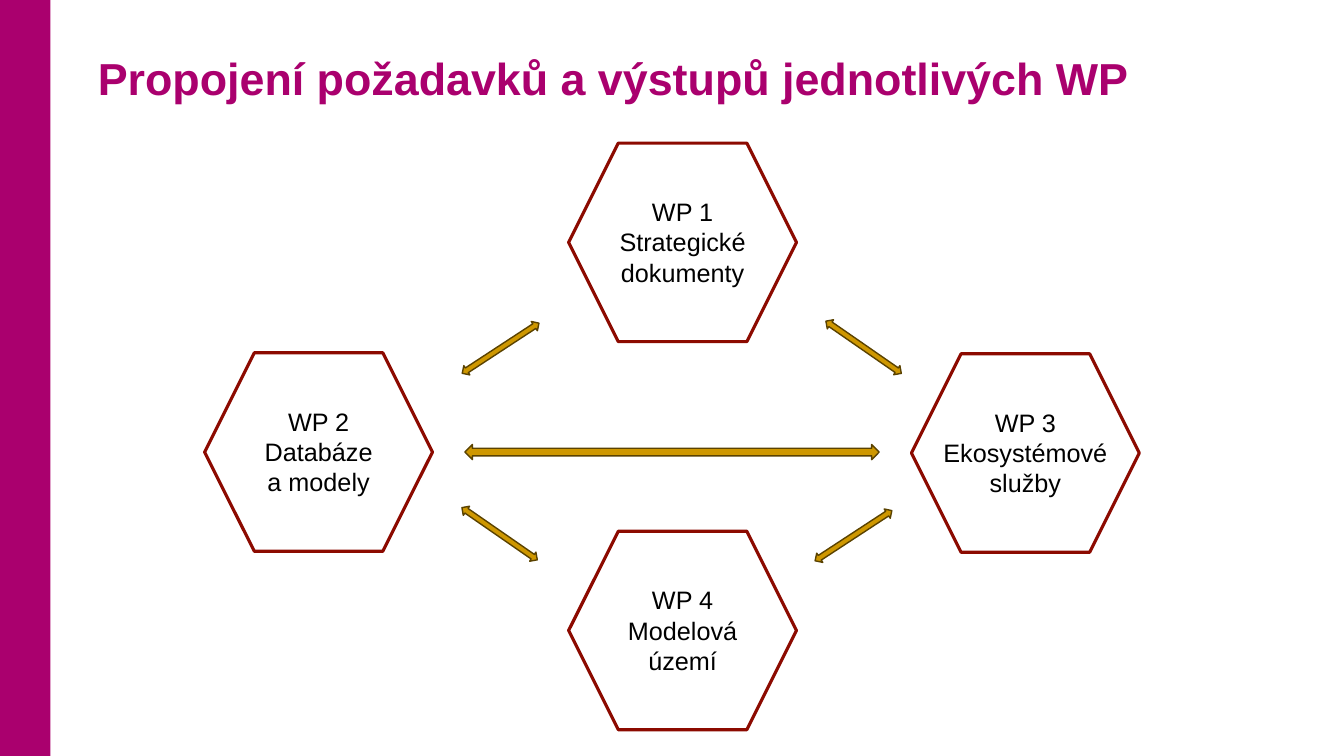
import pptx
import pptx.util
import pptx.dml.color
import pptx.enum.shapes
import pptx.enum.text

Inches = pptx.util.Inches
Pt = pptx.util.Pt
Shape = pptx.enum.shapes.MSO_SHAPE
Align = pptx.enum.text.PP_ALIGN
Anchor = pptx.enum.text.MSO_ANCHOR
AutoSize = pptx.enum.text.MSO_AUTO_SIZE

COLORS = {
    "brand": "AA006E",
    "hexagon": "8C0A00",
    "arrow": "CE9700",
    "arrow_edge": "5A4200",
    "text": "000000",
}
FONT = "Arial"
HEXAGON_WIDTH, HEXAGON_HEIGHT = 2.26, 1.97
LABEL_HEIGHT = 1.01

PACKAGES = [
    (3.61, 0, 1.49, "WP 1", "Strategické dokumenty"),
    (0, 2.08, 1.39, "WP 2", "Databáze a modely"),
    (7.01, 2.09, 1.87, "WP 3", "Ekosystémové služby"),
    (3.61, 3.85, 1.31, "WP 4", "Modelová území"),
]
ARROWS = [
    (2.88, 1.58, 0.11, 0.91, 56.8),
    (6.48, 1.57, 0.11, 0.91, 124.7),
    (2.87, 3.42, 0.11, 0.91, 124.7),
    (6.38, 3.44, 0.11, 0.91, 56.8),
    (4.56, 1.01, 0.15, 4.11, 90),
]


def color(name):
    return pptx.dml.color.RGBColor.from_string(COLORS[name])


def add_span(para, text, size, color_name, bold=False):
    span = para.add_run()
    span.text = text
    span.font.name = FONT
    span.font.size = Pt(size)
    span.font.bold = bold
    span.font.color.rgb = color(color_name)


def add_shape(page, kind, left, top, width, height, fill=None, line=None, weight=1):
    shape = page.shapes.add_shape(
        kind, Inches(left), Inches(top), Inches(width), Inches(height))
    shape.shadow.inherit = False
    if fill:
        shape.fill.solid()
        shape.fill.fore_color.rgb = color(fill)
    else:
        shape.fill.background()
    if line:
        shape.line.color.rgb = color(line)
        shape.line.width = Pt(weight)
    else:
        shape.line.fill.background()
    return shape


def add_title(page, left, top, width, height, text):
    title = page.shapes.title
    title.left, title.top = Inches(left), Inches(top)
    title.width, title.height = Inches(width), Inches(height)
    frame = title.text_frame
    frame.margin_left = frame.margin_right = frame.margin_bottom = 0
    frame.margin_top = Inches(0.04)
    frame.vertical_anchor = Anchor.TOP
    frame.auto_size = AutoSize.NONE
    para = frame.paragraphs[0]
    para.alignment = Align.LEFT
    add_span(para, text, 32, "brand", bold=True)


def add_package(page, left, top, label_width, code, name):
    add_shape(page, Shape.HEXAGON, left, top, HEXAGON_WIDTH, HEXAGON_HEIGHT,
              line="hexagon", weight=2.25)
    box = page.shapes.add_textbox(
        Inches(left + (HEXAGON_WIDTH - label_width) / 2),
        Inches(top + (HEXAGON_HEIGHT - LABEL_HEIGHT) / 2),
        Inches(label_width), Inches(LABEL_HEIGHT))
    frame = box.text_frame
    frame.word_wrap = True
    frame.auto_size = AutoSize.SHAPE_TO_FIT_TEXT
    for para, text in ((frame.paragraphs[0], code), (frame.add_paragraph(), name)):
        para.alignment = Align.CENTER
        add_span(para, text, 18, "text")


def add_diagram(page, left, top):
    for x, y, label_width, code, name in PACKAGES:
        add_package(page, left + x, top + y, label_width, code, name)
    for x, y, width, height, angle in ARROWS:
        arrow = add_shape(page, Shape.UP_DOWN_ARROW, left + x, top + y, width, height,
                          fill="arrow", line="arrow_edge")
        arrow.rotation = angle


def main():
    deck = pptx.Presentation()
    deck.slide_width, deck.slide_height = Inches(13.33), Inches(7.5)
    page = deck.slides.add_slide(deck.slide_layouts.get_by_name("Title Only"))
    add_shape(page, Shape.RECTANGLE, 0, 0, 0.5, 7.5, fill="brand")
    add_title(page, 0.97, 0.46, 11.96, 0.68,
              "Propojení požadavků a výstupů jednotlivých WP")
    add_diagram(page, 2.03, 1.42)
    deck.save("out.pptx")


if __name__ == "__main__":
    main()
